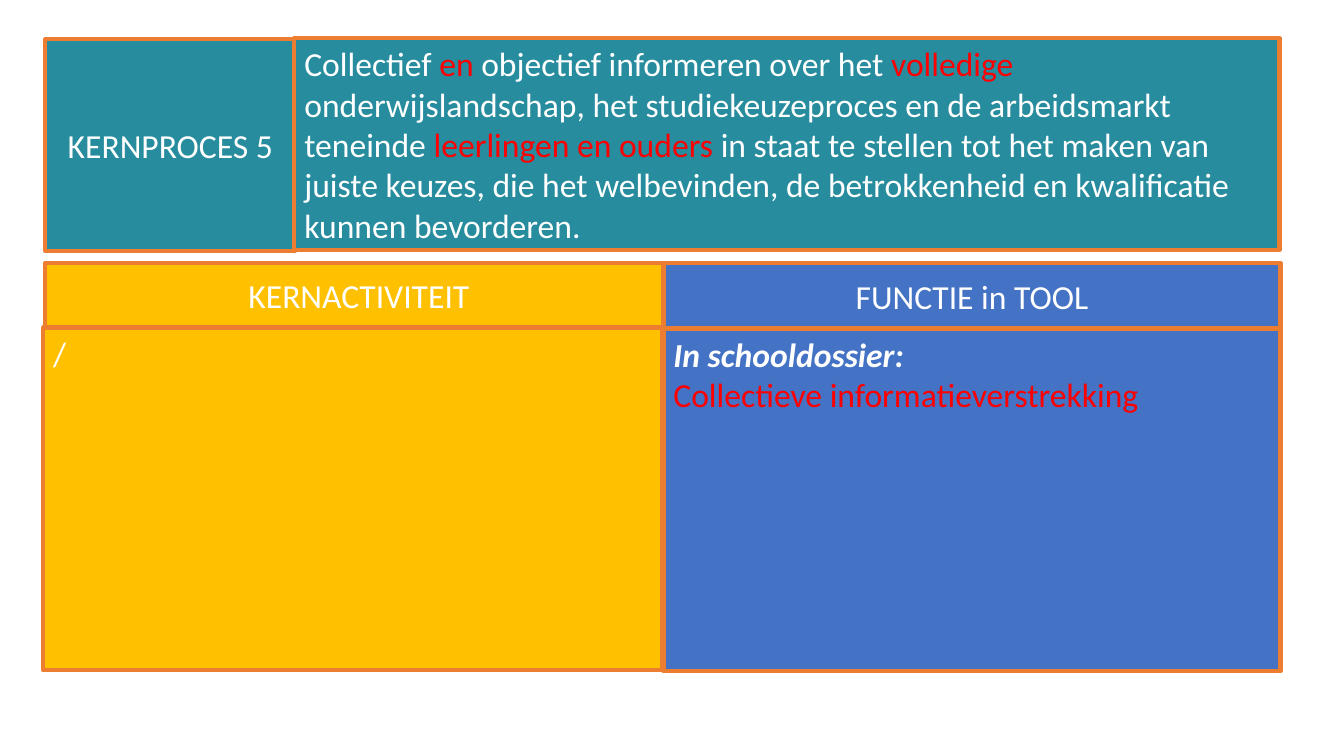
import pptx
import pptx.dml.color
import pptx.enum.shapes
import pptx.enum.text
import pptx.util
from pptx.util import Inches

TEAL, YELLOW, BLUE, ORANGE = "278C9D", "FFC000", "4472C4", "ED7D31"
WHITE, RED = "FFFFFF", "FF0000"
ALIGN = pptx.enum.text.PP_ALIGN
ANCHOR = pptx.enum.text.MSO_ANCHOR


def color(hex_code):
    return pptx.dml.color.RGBColor.from_string(hex_code)


def add_text(para, text, fill=WHITE, bold=False, italic=False):
    span = para.add_run()
    span.text = text
    font = span.font
    font.name = "Calibri"
    font.size = pptx.util.Pt(24)
    font.bold = bold
    font.italic = italic
    font.color.rgb = color(fill)


def add_box(page, left, top, width, height, fill, align=ALIGN.LEFT, anchor=ANCHOR.MIDDLE):
    """Add an outlined rectangle and return its text frame."""
    box = page.shapes.add_shape(
        pptx.enum.shapes.MSO_SHAPE.RECTANGLE,
        Inches(left), Inches(top), Inches(width), Inches(height))
    box.shadow.inherit = False
    box.fill.solid()
    box.fill.fore_color.rgb = color(fill)
    box.line.color.rgb = color(ORANGE)
    box.line.width = pptx.util.Pt(3)
    frame = box.text_frame
    frame.word_wrap = True
    frame.vertical_anchor = anchor
    frame.paragraphs[0].alignment = align
    return frame


def add_heading(page, text, left, top, width, height, fill):
    frame = add_box(page, left, top, width, height, fill, align=ALIGN.CENTER)
    add_text(frame.paragraphs[0], text)


def add_process_description(page):
    para = add_box(page, 2.92, 0.38, 9.77, 2.1, TEAL).paragraphs[0]
    for text, fill in (
        ("Collectief ", WHITE),
        ("en", RED),
        (" objectief informeren over het ", WHITE),
        ("volledige", RED),
        (" onderwijslandschap, het studiekeuzeproces en de arbeidsmarkt teneinde ", WHITE),
        ("leerlingen en ouders ", RED),
        ("in staat te stellen tot het maken van juiste keuzes, die het welbevinden, "
         "de betrokkenheid en kwalificatie kunnen bevorderen.", WHITE),
    ):
        add_text(para, text, fill=fill)


def main():
    deck = pptx.Presentation()
    deck.slide_width = Inches(13.33)
    deck.slide_height = Inches(7.5)
    page = deck.slides.add_slide(deck.slide_layouts[6])

    add_heading(page, "KERNPROCES 5", 0.45, 0.39, 2.48, 2.1, TEAL)
    add_heading(page, "KERNACTIVITEIT", 0.45, 2.61, 6.22, 0.64, YELLOW)
    add_heading(page, "FUNCTIE in TOOL", 6.58, 2.61, 6.12, 0.65, BLUE)
    add_process_description(page)

    activity = add_box(page, 0.43, 3.25, 6.14, 3.4, YELLOW, anchor=ANCHOR.TOP)
    add_text(activity.paragraphs[0], "/")

    function = add_box(page, 6.58, 3.26, 6.12, 3.4, BLUE, anchor=ANCHOR.TOP)
    add_text(function.paragraphs[0], "In schooldossier:", bold=True, italic=True)
    item = function.add_paragraph()
    item.alignment = ALIGN.LEFT
    add_text(item, "Collectieve informatieverstrekking", fill=RED)

    deck.save("out.pptx")


if __name__ == "__main__":
    main()
